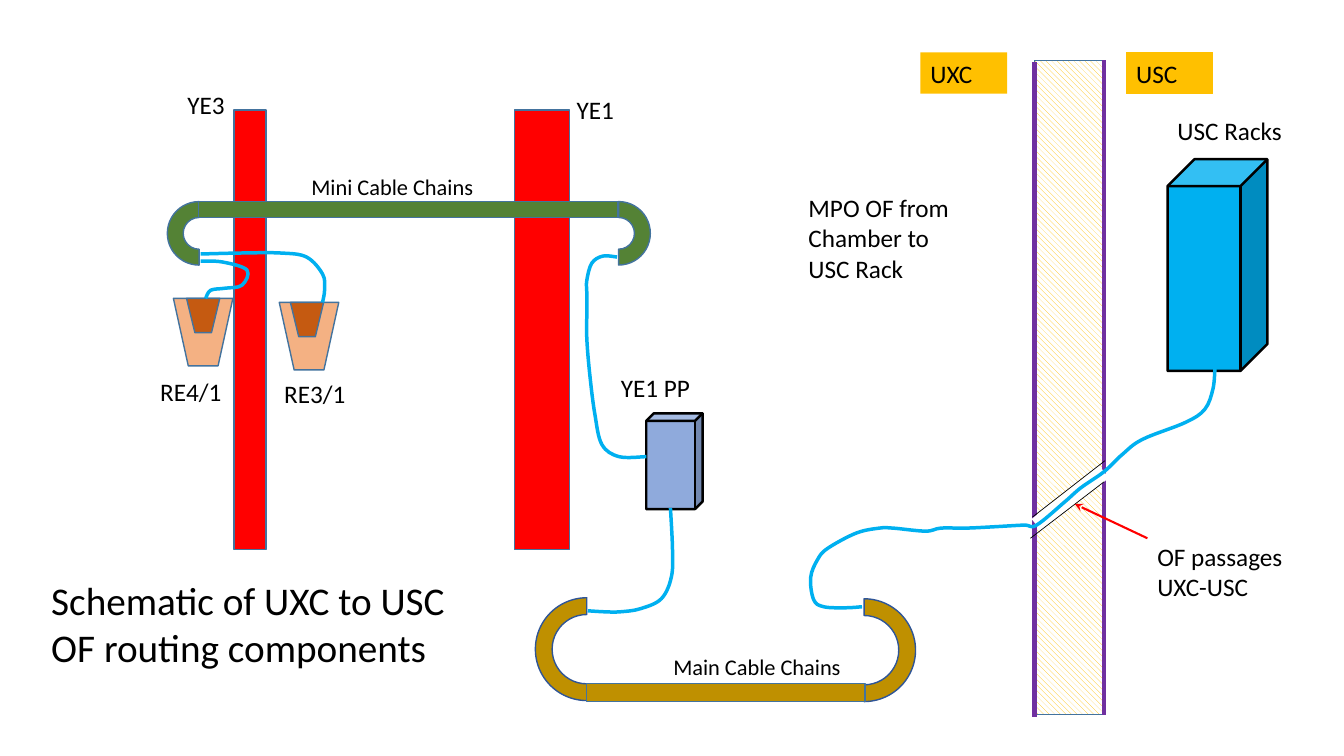
from lxml.etree import SubElement
from pptx import Presentation
from pptx.dml.color import RGBColor
from pptx.enum.dml import MSO_PATTERN
from pptx.enum.shapes import MSO_CONNECTOR, MSO_SHAPE
from pptx.enum.text import MSO_ANCHOR, PP_ALIGN
from pptx.oxml.ns import qn
from pptx.util import Inches, Pt

WIDTH, HEIGHT = Inches(13.33), Inches(7.5)
COLS, ROWS = 133.3, 75
EDGE, FIBRE, GOLD = "43739E", "00B0F0", "FFC000"
GREEN, BROWN, PURPLE, BLACK = "548235", "BF9000", "7030A0", "000000"


def col(n):
    return round(WIDTH * n / COLS)


def row(n):
    return round(HEIGHT * n / ROWS)


def place(x, y, w, h):
    return col(x), row(y), col(w), row(h)


def paint(target, hue):
    target.solid()
    target.fore_color.rgb = RGBColor.from_string(hue)


def stroke(line, hue, size):
    paint(line.fill, hue)
    line.width = Pt(size)


def block(slide, kind, cells, fill, edge=EDGE, size=1, turn=0, tweaks=()):
    shape = slide.shapes.add_shape(kind, *place(*cells))
    shape.shadow.inherit = False
    shape.rotation = turn
    for i, value in enumerate(tweaks):
        shape.adjustments[i] = value
    paint(shape.fill, fill)
    if edge:
        stroke(shape.line, edge, size)
    else:
        shape.line.fill.background()
    return shape


def write(shape, words, size=18):
    frame = shape.text_frame
    frame.word_wrap = True
    para = frame.paragraphs[0]
    para.alignment = PP_ALIGN.LEFT
    run = para.add_run()
    run.text = words
    run.font.name = "Calibri"
    run.font.size = Pt(size)
    run.font.color.rgb = RGBColor.from_string(BLACK)


def label(slide, words, cells, size=18):
    box = slide.shapes.add_textbox(*place(*cells))
    write(box, words, size)


def tag(slide, words, x, edge):
    shape = block(slide, MSO_SHAPE.RECTANGLE, (x, 5.2, 8.6, 4.1), GOLD, edge, 0.75)
    shape.text_frame.vertical_anchor = MSO_ANCHOR.MIDDLE
    write(shape, words)


def rule(slide, start, end, hue, size, head=None):
    line = slide.shapes.add_connector(
        MSO_CONNECTOR.STRAIGHT, col(start[0]), row(start[1]), col(end[0]), row(end[1]))
    stroke(line.line, hue, size)
    props = line.element.spPr
    if head:
        SubElement(props.find(qn("a:ln")), qn("a:tailEnd"), type=head)
    SubElement(props, qn("a:effectLst"))


def bend(shape):
    spots = [(int(pt.get("x")), int(pt.get("y"))) for pt in shape.element.iter(qn("a:pt"))]
    ring = [spots[0], *spots, spots[-1]]
    for i, leg in enumerate(list(shape.element.iter(qn("a:lnTo")))):
        a, b, c, d = ring[i:i + 4]
        leave = [q + (r - p) / 6 for p, q, r in zip(a, b, c)]
        reach = [q - (r - p) / 6 for p, q, r in zip(b, c, d)]
        curve = leg.makeelement(qn("a:cubicBezTo"))
        for x, y in (leave, reach, c):
            SubElement(curve, qn("a:pt"), x=str(round(x)), y=str(round(y)))
        leg.getparent().replace(leg, curve)


def cable(slide, knots):
    pen = slide.shapes.build_freeform(col(knots[0][0]), row(knots[0][1]))
    pen.add_line_segments([(col(x), row(y)) for x, y in knots[1:]], close=False)
    shape = pen.convert_to_shape()
    bend(shape)
    shape.shadow.inherit = False
    shape.fill.background()
    stroke(shape.line, FIBRE, 2.5)


def chamber(slide):
    wall = block(slide, MSO_SHAPE.RECTANGLE, (102.6, 6, 6.9, 64.9), GOLD)
    wall.fill.patterned()
    wall.fill.pattern = MSO_PATTERN.WIDE_DOWNWARD_DIAGONAL
    wall.fill.fore_color.rgb = RGBColor.from_string(GOLD)
    wall.fill.back_color.rgb = RGBColor.from_string("FFFFFF")
    rule(slide, (102.6, 6.2), (102.6, 71.1), PURPLE, 3)
    rule(slide, (109.5, 6), (109.5, 70.9), PURPLE, 3)
    for x, w in ((51, 5.5), (23.2, 3.2)):
        block(slide, MSO_SHAPE.RECTANGLE, (x, 10.9, w, 43.6), "FF0000")
    for x, y, inset in ((17.2, 29.6, 1.3), (27.7, 30, 1.1)):
        block(slide, MSO_SHAPE.TRAPEZOID, (x, y, 5.9, 6.7), "F4B183", turn=180)
        block(slide, MSO_SHAPE.TRAPEZOID, (x + inset, y, 3.3, 3.4), "C55A11", turn=180)


def chains(slide):
    for x, turn in ((16.6, 270), (58.2, 90)):
        block(slide, MSO_SHAPE.BLOCK_ARC, (x, 20, 6.3, 6.3), GREEN, turn=turn)
    block(slide, MSO_SHAPE.RECTANGLE, (19.7, 20, 41.6, 1.6), GREEN)
    for x, y, turn in ((53.1, 59.3, 270), (80.6, 59.4, 90)):
        block(slide, MSO_SHAPE.BLOCK_ARC, (x, y, 10.2, 10.2), BROWN, "2F5597",
              turn=turn, tweaks=(108, 0, 0.163))
    block(slide, MSO_SHAPE.RECTANGLE, (58.2, 67.8, 27.6, 1.8), BROWN)


def racks(slide):
    for cells, hue, depth in (
        ((64.1, 41, 5.6, 9.5), "8FAADC", 0.136),
        ((115.8, 15.8, 9.9, 21), FIBRE, 0.269),
    ):
        block(slide, MSO_SHAPE.CUBE, cells, hue, BLACK, 1.75, tweaks=(depth,))


def fibres(slide):
    rule(slide, (102.8, 52.1), (109.5, 46.8), "FFFFFF", 11.25)
    for knots in (
        [(19.9, 25.2), (24, 25.1), (27.8, 25.1), (30.4, 25.5), (32, 27.2),
         (32.2, 28.7), (32, 30)],
        [(19.9, 25.9), (22.1, 26), (24.5, 26.8), (24, 28.3), (22.3, 28.6),
         (20.9, 28.8), (20.4, 29.6)],
        [(61.2, 25.5), (59.8, 25.4), (58.7, 26.1), (58.2, 27.8), (58.2, 29.1),
         (58.2, 31.1), (58.2, 33.6), (58.5, 37.2), (59, 41.1), (59.7, 44.1),
         (61.4, 45.3), (64.1, 45.3)],
        [(66.5, 50.4), (66.7, 54.4), (66.6, 57.2), (65.6, 59.4), (63.5, 60.4),
         (61.5, 60.7), (60, 60.7), (58.3, 60.6)],
        [(85.5, 60.2), (83.9, 60.3), (81.7, 60.2), (80.7, 59.5), (80.4, 57.3),
         (81.1, 55.5), (82.1, 54.4), (84.9, 52.9), (87.2, 52.4), (88.6, 52.4),
         (91.8, 52.7), (93.3, 52.4), (95.7, 52.4), (98, 52.3), (101.5, 52.1),
         (102.8, 52.1), (105.6, 49.8), (107.2, 48.4), (109.5, 46.8), (111.3, 45.1),
         (113.3, 43.6), (117.6, 41.9), (119.5, 40.6), (120.3, 38.6), (120.5, 36.6)],
    ):
        cable(slide, knots)
    rule(slide, (102.4, 51.3), (109.6, 45.7), BLACK, 0.5)
    rule(slide, (102.2, 53.4), (109.5, 47.8), BLACK, 0.5)
    rule(slide, (113.8, 53.4), (106.6, 50), "FF0000", 1.5, "stealth")


def labels(slide):
    tag(slide, "UXC", 91.3, None)
    tag(slide, "USC", 111.7, GOLD)
    for words, cells in (
        ("YE3", (17.6, 8.4, 7.8, 4)),
        ("YE1", (56.2, 8.9, 7.8, 4)),
        ("USC Racks", (115.8, 10.9, 13.9, 4)),
        ("YE1 PP", (60.6, 36.4, 10.3, 4)),
        ("RE3/1", (27.2, 37, 10, 4)),
        ("RE4/1", (14.9, 36.8, 10, 4)),
        ("OF passages UXC-USC", (113.8, 53.2, 15.4, 7.2)),
        ("MPO OF from Chamber to USC Rack", (79.2, 18.6, 18.2, 10.1)),
    ):
        label(slide, words, cells)
    label(slide, "Mini Cable Chains", (29.9, 16.7, 21, 3.7), 16)
    label(slide, "Main Cable Chains", (65.8, 64.3, 21, 3.7), 16)
    label(slide, "Schematic of UXC to USC OF routing components", (4.1, 56.7, 44.9, 10.4), 28)


def main():
    deck = Presentation()
    deck.slide_width, deck.slide_height = WIDTH, HEIGHT
    slide = deck.slides.add_slide(deck.slide_layouts[6])
    for draw in (chamber, chains, racks, fibres, labels):
        draw(slide)
    deck.save("out.pptx")


if __name__ == "__main__":
    main()
